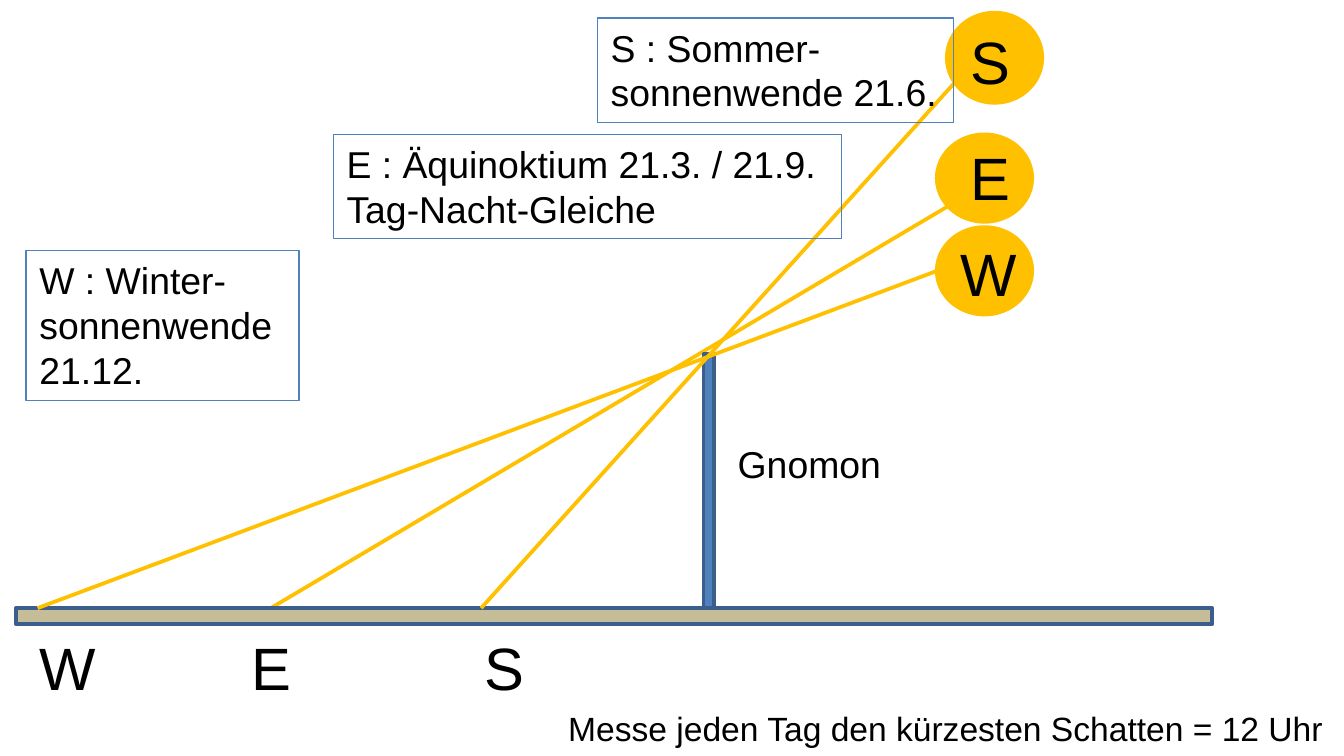
import pptx
import pptx.util
import pptx.dml.color
import pptx.enum.shapes
import pptx.enum.text
import pptx.oxml.ns
from lxml import etree

SCALE = 4572  # EMU per px, 200 px to the inch
KIND = pptx.enum.shapes.MSO_SHAPE
SUN = "FFC000"
BLUE = "4F81BD"
EDGE = "3A5F8C"
SAND = "C4BD97"


def px(n):
    return pptx.util.Emu(n * SCALE)


def color(text):
    return pptx.dml.color.RGBColor.from_string(text)


class Board:
    font = "Arial"
    ink = "000000"

    def __init__(self, deck):
        self.slide = deck.slides.add_slide(deck.slide_layouts[6])

    def shape(self, kind, box, fill, edge, width=2):
        item = self.slide.shapes.add_shape(kind, *map(px, box))
        item.shadow.inherit = False
        item.fill.solid()
        item.fill.fore_color.rgb = color(fill)
        item.line.color.rgb = color(edge)
        item.line.width = pptx.util.Pt(width)

    def ray(self, start, end):
        line = self.slide.shapes.add_connector(
            pptx.enum.shapes.MSO_CONNECTOR.STRAIGHT, *map(px, start + end))
        line.line.color.rgb = color(SUN)
        line.line.width = pptx.util.Pt(2)
        etree.SubElement(line._element.spPr, pptx.oxml.ns.qn("a:effectLst"))

    def text(self, box, words, size=20, wrap=False):
        item = self.slide.shapes.add_textbox(*map(px, box))
        frame = item.text_frame
        frame.word_wrap = wrap
        frame.auto_size = pptx.enum.text.MSO_AUTO_SIZE.NONE
        frame.text = words
        for para in frame.paragraphs:
            para.font.name = self.font
            para.font.size = pptx.util.Pt(size)
            para.font.color.rgb = color(self.ink)
        return item

    def note(self, box, words):
        item = self.text(box, words, wrap=True)
        item.line.color.rgb = color(BLUE)
        item.line.width = pptx.util.Pt(0.75)

    def letter(self, left, top, sign):
        width = 126 if sign == "W" else 100
        self.text((left, top, width, 128), sign, 32)


def main():
    deck = pptx.Presentation()
    deck.slide_width, deck.slide_height = px(2000), px(1125)
    board = Board(deck)
    floor = 905

    # Ground, gnomon and sun rays
    board.ray((403, floor), (1456, 280))
    board.shape(KIND.RECTANGLE, (24, floor, 1780, 24), SAND, EDGE)
    board.shape(KIND.RECTANGLE, (1047, 527, 16, 378), BLUE, EDGE)
    board.ray((56, floor), (1440, 386))
    board.ray((716, floor), (1472, 66))

    # Suns
    for left, top, high in ((1409, 19, 134), (1394, 338, 130),
                            (1394, 200, 130)):
        board.shape(KIND.OVAL, (left, top, 142, high), SUN, SUN)

    # Framed notes
    board.note((39, 373, 406, 223), "W : Winter-\nsonnenwende\n21.12.")
    board.note((889, 27, 530, 155), "S : Sommer-\nsonnenwende 21.6.")
    board.note((496, 200, 756, 155),
               "E : Äquinoktium 21.3. / 21.9.\nTag-Nacht-Gleiche")

    # Letters below the shadow tips and on the suns
    for sign, tip, left, top in (("S", 701, 1425, 27), ("E", 354, 1425, 200),
                                 ("W", 39, 1409, 342)):
        board.letter(tip, 929, sign)
        board.letter(left, top, sign)

    # Captions
    board.text((1078, 646, 256, 88), "Gnomon")
    board.text((826, 1044, 1174, 80),
               "Messe jeden Tag den kürzesten Schatten = 12 Uhr", 18)

    deck.save("out.pptx")


if __name__ == "__main__":
    main()
